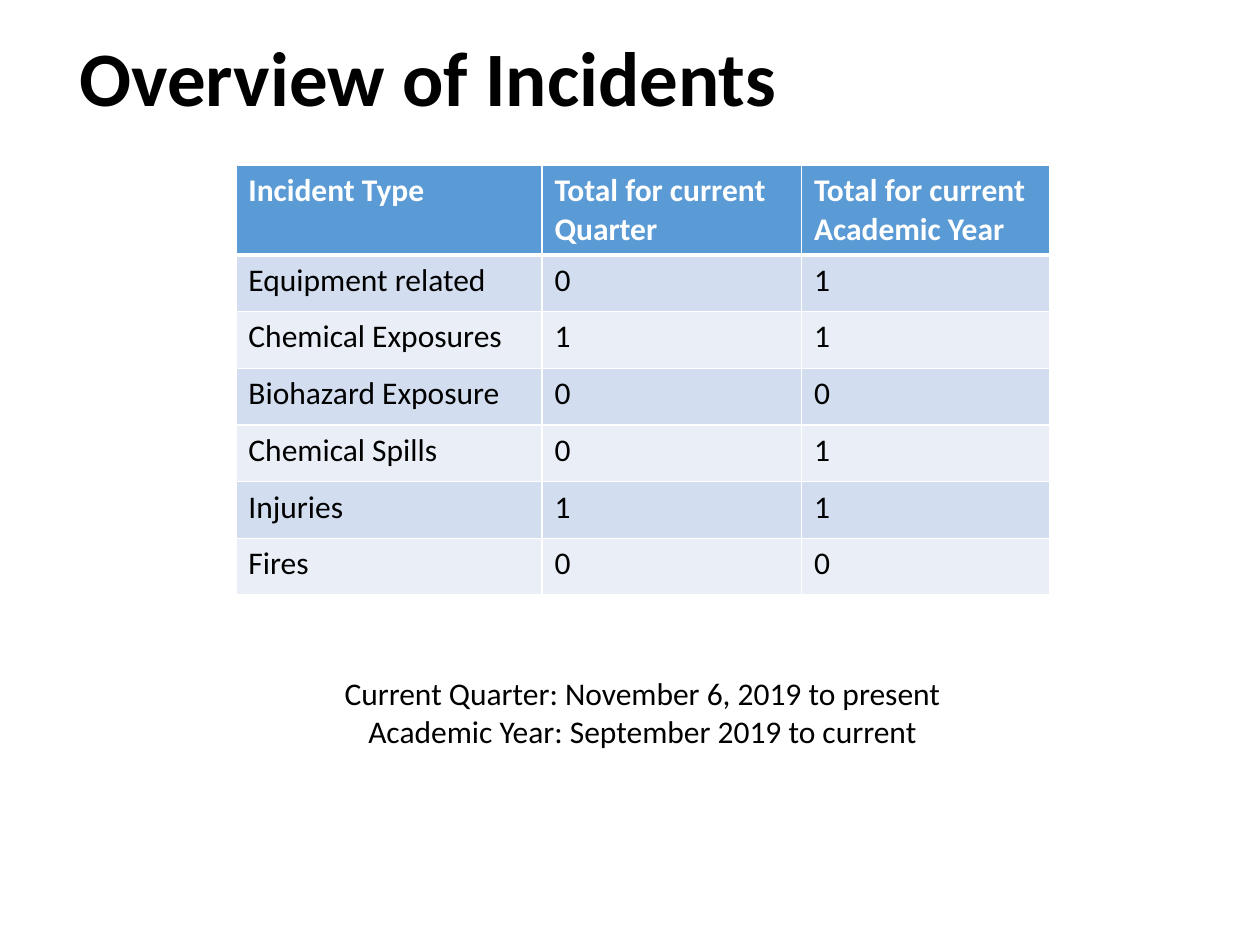
from dataclasses import dataclass

from lxml import etree
from pptx import Presentation
from pptx.dml.color import RGBColor
from pptx.enum.text import MSO_ANCHOR, MSO_AUTO_SIZE, PP_ALIGN
from pptx.oxml.ns import qn
from pptx.util import Pt

LEFT, CENTER = PP_ALIGN.LEFT, PP_ALIGN.CENTER
MIDDLE = MSO_ANCHOR.MIDDLE
FIXED = MSO_AUTO_SIZE.NONE
TITLE_ONLY = 5


@dataclass(frozen=True)
class Theme:
    font: str = "Calibri"
    head: int = 44
    body: int = 18
    ink: str = "000000"
    white: str = "FFFFFF"
    blue: str = "5B9BD5"
    bands: tuple = ("D2DEEF", "EAEFF7")


THEME = Theme()

# Boxes are left, top, width, height in points
TITLE_BOX = (38.2, 10.8, 620.6, 72)
TABLE_BOX = (134.8, 94.5, 465.1, 244)
NOTE_BOX = (176.4, 381.6, 381.6, 72.7)

COLS = (174.9, 148.3, 141.9)
ROW = 32.4
ROWS = (
    ("Incident Type", "Total for current Quarter", "Total for current Academic Year"),
    ("Equipment related", 0, 1),
    ("Chemical Exposures", 1, 1),
    ("Biohazard Exposure", 0, 0),
    ("Chemical Spills", 0, 1),
    ("Injuries", 1, 1),
    ("Fires", 0, 0),
)
NOTES = (
    "Current Quarter: November 6, 2019 to present",
    "Academic Year: September 2019 to current",
)


def write(frame, *lines, size=THEME.body, color=THEME.ink, bold=False,
          align=LEFT, space=None):
    """Fill a text frame, one paragraph a line."""
    for i, line in enumerate(lines):
        para = frame.add_paragraph() if i else frame.paragraphs[0]
        para.alignment = align
        para.line_spacing = space
        run = para.add_run()
        run.text = str(line)
        font = run.font
        font.name, font.size, font.bold = THEME.font, Pt(size), bold
        font.color.rgb = RGBColor.from_string(color)


def edge(cell, side, width):
    """Draw one white cell border."""
    props = cell._tc.get_or_add_tcPr()
    line = etree.SubElement(props, qn(f"a:ln{side}"), w=str(Pt(width)))
    fill = etree.SubElement(line, qn("a:solidFill"))
    etree.SubElement(fill, qn("a:srgbClr"), val=THEME.white)


def add_title(slide, box):
    title = slide.shapes.title
    title.left, title.top, title.width, title.height = map(Pt, box)
    frame = title.text_frame
    frame.vertical_anchor = MIDDLE
    frame.auto_size = FIXED
    write(frame, "Overview of Incidents", size=THEME.head, bold=True, space=0.9)


def add_grid(slide, box):
    shape = slide.shapes.add_table(len(ROWS), len(COLS), *map(Pt, box))
    table = shape.table
    for col, width in zip(table.columns, COLS):
        col.width = Pt(width)
    for r, row in enumerate(ROWS):
        table.rows[r].height = Pt(ROW)
        head = r == 0
        shade = THEME.blue if head else THEME.bands[(r - 1) % 2]
        for c, value in enumerate(row):
            cell = table.cell(r, c)
            for side in "LRTB":
                # The rule under the header is heavier
                heavy = (side == "B" and head) or (side == "T" and r == 1)
                edge(cell, side, 3 if heavy else 1)
            cell.fill.solid()
            cell.fill.fore_color.rgb = RGBColor.from_string(shade)
            write(cell.text_frame, value, bold=head,
                  color=THEME.white if head else THEME.ink)
    # The header wraps to two lines, so the frame is taller than its rows
    shape.height = Pt(box[3])


def add_note(slide, box):
    frame = slide.shapes.add_textbox(*map(Pt, box)).text_frame
    frame.word_wrap = False
    frame.auto_size = FIXED
    write(frame, *NOTES, align=CENTER)


def main():
    deck = Presentation()
    deck.slide_width, deck.slide_height = Pt(720), Pt(540)
    slide = deck.slides.add_slide(deck.slide_layouts[TITLE_ONLY])
    add_title(slide, TITLE_BOX)
    add_grid(slide, TABLE_BOX)
    add_note(slide, NOTE_BOX)
    deck.save("out.pptx")


if __name__ == "__main__":
    main()
